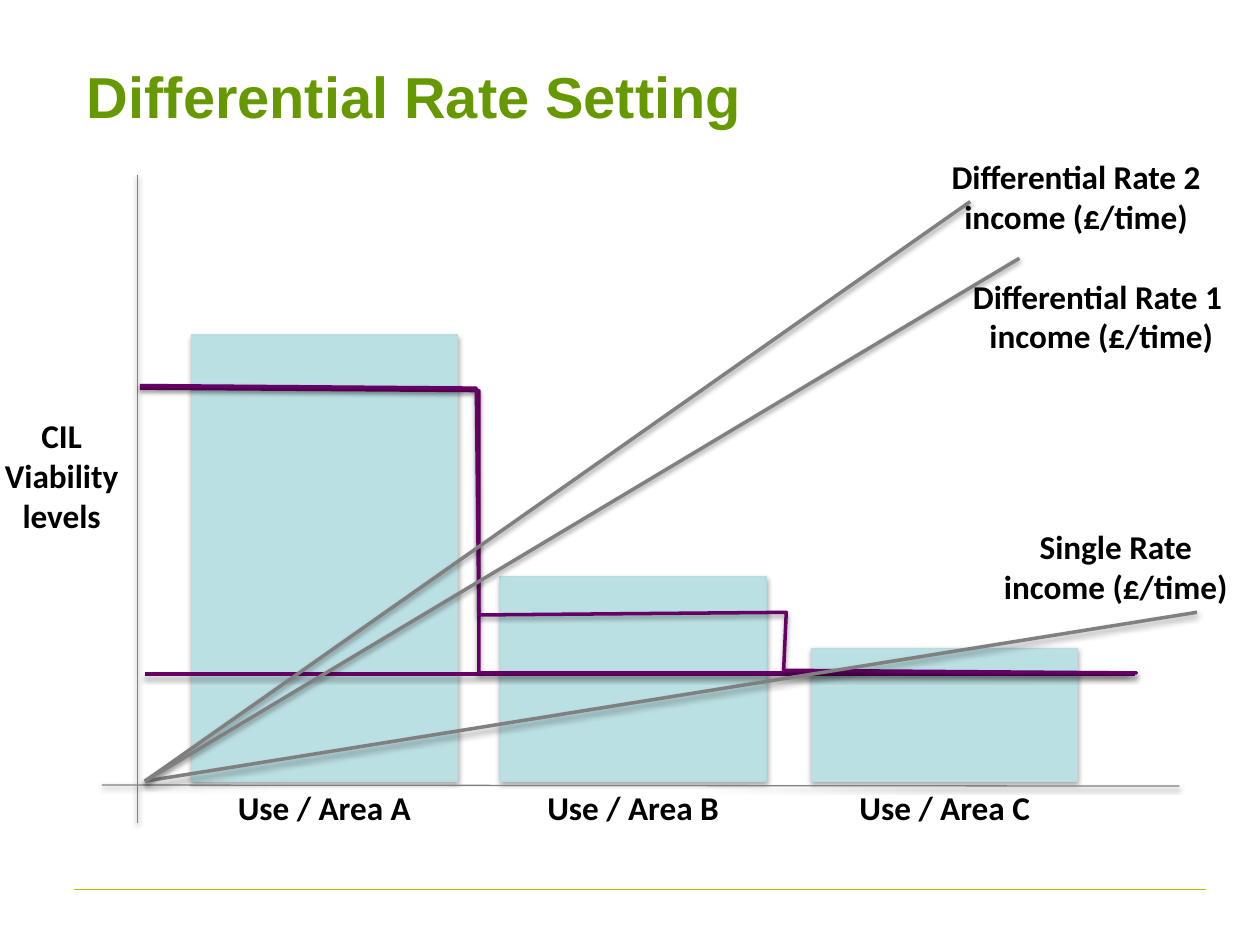
from lxml.etree import SubElement
from pptx import Presentation
from pptx.dml.color import RGBColor
from pptx.enum.shapes import MSO_CONNECTOR, MSO_SHAPE
from pptx.enum.text import MSO_ANCHOR, MSO_AUTO_SIZE, PP_ALIGN
from pptx.oxml.ns import qn
from pptx.util import Pt

COLORS = {
    "title": "669900", "rule": "99CC00", "axis": "808080", "rate": "660066",
    "bar": "BBE0E3", "bar_edge": "B6DCDF", "text": "000000", "shadow": "000000",
}


def rgb(name):
    return RGBColor.from_string(COLORS[name])


class SlideBuilder:
    """Holds the style and the current slide; all lengths are in points."""
    title_font, label_font = "Arial", "Calibri"
    title_size, label_size = 33, 19
    thin, thick = 0.75, 2

    def __init__(self, slide):
        self.s = slide

    def effects(self, sp, opacity):
        """Set a soft downward shadow, or none when opacity is 0."""
        lst = SubElement(sp._element.spPr, qn("a:effectLst"))
        if opacity:
            shadow = SubElement(lst, qn("a:outerShdw"), blurRad=str(Pt(3.1)),
                                dist=str(Pt(1.6)), dir="5400000", rotWithShape="0")
            color = SubElement(shadow, qn("a:srgbClr"), val=COLORS["shadow"])
            SubElement(color, qn("a:alpha"), val=str(opacity * 1000))

    def outline(self, sp, color, width, opacity=38):
        sp.line.color.rgb = rgb(color)
        sp.line.width = Pt(width)
        self.effects(sp, opacity)

    def format_text(self, tf, text, font, size, color, align):
        tf.word_wrap = True
        p = tf.paragraphs[0]
        p.text = text
        p.alignment = align
        p.font.name, p.font.size, p.font.bold = font, Pt(size), True
        p.font.color.rgb = rgb(color)

    def title(self, text, x, y, w, h):
        sp = self.s.shapes.title
        sp.left, sp.top, sp.width, sp.height = map(Pt, (x, y, w, h))
        sp.text_frame.vertical_anchor = MSO_ANCHOR.MIDDLE
        self.format_text(sp.text_frame, text, self.title_font, self.title_size,
                         "title", PP_ALIGN.LEFT)

    def label(self, text, x, y, w, h):
        tf = self.s.shapes.add_textbox(*map(Pt, (x, y, w, h))).text_frame
        self.format_text(tf, text, self.label_font, self.label_size,
                         "text", PP_ALIGN.CENTER)
        tf.auto_size = MSO_AUTO_SIZE.SHAPE_TO_FIT_TEXT

    def bar(self, x, y, w, h):
        sp = self.s.shapes.add_shape(MSO_SHAPE.RECTANGLE, *map(Pt, (x, y, w, h)))
        sp.fill.solid()
        sp.fill.fore_color.rgb = rgb("bar")
        self.outline(sp, "bar_edge", self.thin, 35)

    def line(self, start, end, color, width, opacity=38):
        sp = self.s.shapes.add_connector(MSO_CONNECTOR.STRAIGHT,
                                         *map(Pt, start + end))
        self.outline(sp, color, width, opacity)

    def steps(self, points):
        """Draw an open stepped rate line through the points."""
        first, *rest = [(Pt(x), Pt(y)) for x, y in points]
        builder = self.s.shapes.build_freeform(*first)
        builder.add_line_segments(rest, close=False)
        sp = builder.convert_to_shape()
        sp.fill.background()
        self.outline(sp, "rate", self.thick)


def main():
    prs = Presentation()
    prs.slide_width, prs.slide_height = Pt(720), Pt(540)
    b = SlideBuilder(prs.slides.add_slide(prs.slide_layouts[5]))

    b.title("Differential Rate Setting", 42.5, 21.6, 648, 66.2)
    b.line((42.5, 508.3), (689, 508.3), "rule", b.thin, 0)
    b.line((78.5, 100), (78.5, 470.2), "axis", b.thin)

    base, bar_width = 446.4, 152
    for name, x, height in (("A", 109.4, 255), ("B", 285.8, 116.9),
                            ("C", 463.9, 76)):
        b.bar(x, base - height, bar_width, height)
        b.label(f"Use / Area {name}", x, base, bar_width, 31)

    b.line((82.8, 385.2), (648.7, 385.2), "rate", b.thick)
    b.line((58.3, 448.6), (673.9, 449.2), "axis", b.thin)
    b.label("CIL Viability levels", -9.4, 234, 89.3, 77)

    b.steps([(79.9, 221.8), (273.6, 223.2), (273.6, 384.5),
             (649.4, 384.5), (646.6, 384.5)])
    b.steps([(79.9, 220.3), (272.2, 221.8), (273.6, 351.4),
             (449.3, 349.9), (447.8, 383), (645.1, 384.5)])

    origin = (82.8, base)
    for end, text, x, y, w in (
        ((554.4, 115.2), "Differential Rate 2\nincome (£/time)", 527.8, 85.7, 174.2),
        ((684, 349.9), "Single Rate\nincome (£/time)", 555.1, 297.4, 164.9),
        ((582.5, 147.6), "Differential Rate 1\n income (£/time)", 538.6, 154.1, 177.1),
    ):
        b.line(origin, end, "axis", b.thick)
        b.label(text, x, y, w, 53.3)

    prs.save("out.pptx")


if __name__ == "__main__":
    main()
